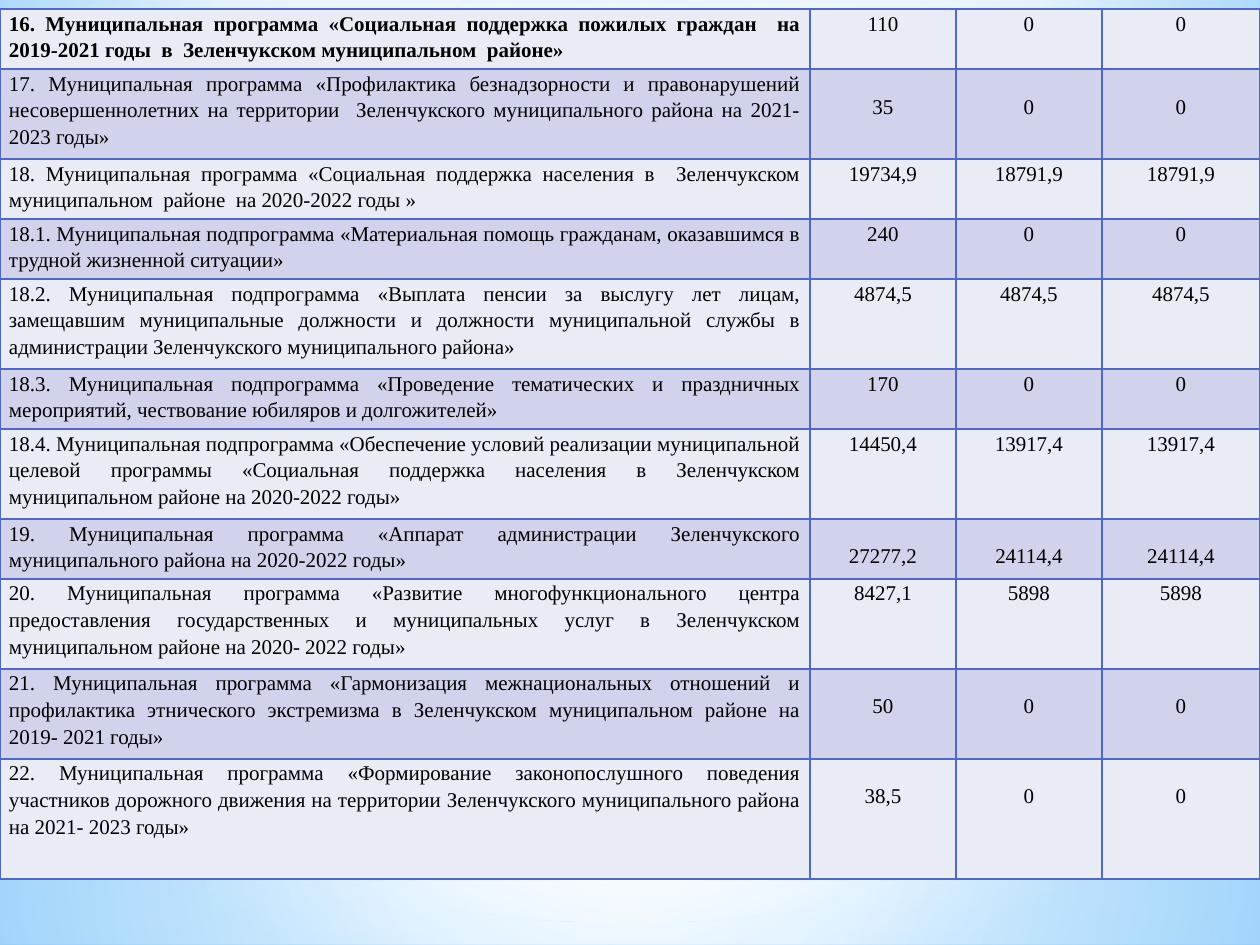
from lxml.etree import SubElement
from pptx import Presentation
from pptx.dml.color import RGBColor
from pptx.enum.shapes import MSO_SHAPE
from pptx.enum.text import PP_ALIGN
from pptx.oxml.ns import qn
from pptx.util import Emu, Pt

EMU_PER_PX = 914400 // 126
WIDTH, HEIGHT = 1260, 945
FONT = "Times New Roman"
BORDER = "4E67C8"
ROW_FILLS = ("E9EBF5", "D0D3EB")
COLUMN_WIDTHS = (810, 146, 146, 158)
LINE_HEIGHT = 30
LOWERED_MARGIN = 23

# Programme, three yearly amounts, row height in lines, amounts lowered by a line
PROGRAMMES = [
    ("16. Муниципальная программа «Социальная поддержка пожилых граждан  на 2019-2021 годы  в  "
     "Зеленчукском муниципальном  районе»", ("110", "0", "0"), 2, False),
    ("17. Муниципальная программа «Профилактика безнадзорности и правонарушений "
     "несовершеннолетних на территории  Зеленчукского муниципального района на 2021-2023 годы»",
     ("35", "0", "0"), 3, True),
    ("18. Муниципальная программа «Социальная поддержка населения в  Зеленчукском "
     "муниципальном  районе  на 2020-2022 годы »", ("19734,9", "18791,9", "18791,9"), 2, False),
    ("18.1. Муниципальная подпрограмма «Материальная помощь гражданам, оказавшимся в трудной "
     "жизненной ситуации»", ("240", "0", "0"), 2, False),
    ("18.2. Муниципальная подпрограмма «Выплата пенсии за выслугу лет лицам, замещавшим "
     "муниципальные должности и должности муниципальной службы в администрации Зеленчукского "
     "муниципального района»", ("4874,5", "4874,5", "4874,5"), 3, False),
    ("18.3. Муниципальная подпрограмма «Проведение тематических и праздничных мероприятий, "
     "чествование юбиляров и долгожителей»", ("170", "0", "0"), 2, False),
    ("18.4. Муниципальная подпрограмма «Обеспечение условий реализации муниципальной целевой "
     "программы «Социальная поддержка населения в Зеленчукском муниципальном районе на "
     "2020-2022 годы»", ("14450,4", "13917,4", "13917,4"), 3, False),
    ("19. Муниципальная программа «Аппарат администрации Зеленчукского муниципального района "
     "на 2020-2022 годы»", ("27277,2", "24114,4", "24114,4"), 2, True),
    ("20. Муниципальная программа «Развитие многофункционального центра предоставления "
     "государственных и муниципальных услуг в Зеленчукском муниципальном районе на 2020- 2022 "
     "годы»", ("8427,1", "5898", "5898"), 3, False),
    ("21. Муниципальная программа «Гармонизация межнациональных отношений и профилактика "
     "этнического экстремизма в Зеленчукском муниципальном районе на 2019- 2021 годы»",
     ("50", "0", "0"), 3, True),
    ("22. Муниципальная программа «Формирование законопослушного поведения участников "
     "дорожного движения на территории Зеленчукского муниципального района на 2021- 2023 годы»",
     ("38,5", "0", "0"), 4, True),
]

# Preset shape, box, gradient stops (position, colour, opacity), circular or vertical
GLOWS = [
    (MSO_SHAPE.RECTANGLE, (0, 703, WIDTH, 242),
     [(0, "FFFFFF", 91), (37, "FFFFFF", 76), (100, "B4DCFA", 79)], True),
    (MSO_SHAPE.RECTANGLE, (0, 0, WIDTH, 703),
     [(0, "FFFFFF", 89), (48, "FFFFFF", 62), (100, "B4DCFA", 79)], True),
    (MSO_SHAPE.RECTANGLE, (0, 519, WIDTH, 315),
     [(0, "FFFFFF", 0), (29, "FFFFFF", 30), (45, "B4DCFA", 40), (55, "FFFFFF", 26),
      (65, "B4DCFA", 60), (100, "FFFFFF", 0)], False),
    (MSO_SHAPE.OVAL, (0, 220, WIDTH, 703),
     [(0, "FFFFFF", 100), (56, "FFFFFF", 0)], True),
]


def px(length):
    return Emu(length * EMU_PER_PX)


def color(value):
    return RGBColor.from_string(value)


def set_gradient(element, stops, focus=None):
    """Rewrite the gradient inside element: circular around focus, or else vertical."""
    gradient = element.find(".//" + qn("a:gradFill"))
    for child in list(gradient):
        gradient.remove(child)
    stop_list = SubElement(gradient, qn("a:gsLst"))
    for position, value, opacity in stops:
        stop = SubElement(stop_list, qn("a:gs"), pos=str(position * 1000))
        stop_color = SubElement(stop, qn("a:srgbClr"), val=value)
        if opacity < 100:
            SubElement(stop_color, qn("a:alpha"), val=str(opacity * 1000))
    if focus:
        path = SubElement(gradient, qn("a:path"), path="circle")
        sides = {side: str(share * 1000) for side, share in zip("ltrb", focus)}
        SubElement(path, qn("a:fillToRect"), **sides)
    else:
        SubElement(gradient, qn("a:lin"), ang="5400000", scaled="0")


def paint_background(slide):
    slide.background.fill.gradient()
    stops = [(0, "9ED5FF", 100), (60, "FFFFFF", 100), (100, "5BB9FF", 100)]
    set_gradient(slide.element, stops, (20, 10, 20, 60))


def add_glow(slide, preset, box, stops, circular):
    shape = slide.shapes.add_shape(preset, *map(px, box))
    shape.shadow.inherit = False
    shape.line.fill.background()
    shape.fill.gradient()
    set_gradient(shape.element, stops, (50, 50, 50, 50) if circular else None)


def add_borders(cell):
    properties = cell._tc.get_or_add_tcPr()
    for index, side in enumerate(("a:lnL", "a:lnR", "a:lnT", "a:lnB")):
        line = properties.makeelement(qn(side), {"w": str(Pt(1))})
        properties.insert(index, line)
        fill = SubElement(line, qn("a:solidFill"))
        SubElement(fill, qn("a:srgbClr"), val=BORDER)


def fill_cell(cell, text, fill, alignment, bold=False, top=0):
    cell.fill.solid()
    cell.fill.fore_color.rgb = color(fill)
    cell.margin_left = cell.margin_right = px(9)
    cell.margin_top, cell.margin_bottom = px(top), 0
    add_borders(cell)
    para = cell.text_frame.paragraphs[0]
    para.alignment = alignment
    para.line_spacing = 1.15
    span = para.add_run()
    span.text = text
    span.font.name = FONT
    span.font.size = Pt(12)
    span.font.bold = bold
    span.font.color.rgb = color("000000")


def add_programme_table(slide):
    height = LINE_HEIGHT * sum(lines for _, _, lines, _ in PROGRAMMES)
    frame = slide.shapes.add_table(len(PROGRAMMES), len(COLUMN_WIDTHS),
                                   px(0), px(9), px(WIDTH), px(height))
    table = frame.table
    table.first_row = table.horz_banding = False
    for column, width in zip(table.columns, COLUMN_WIDTHS):
        column.width = px(width)
    for index, (name, amounts, lines, lowered) in enumerate(PROGRAMMES):
        table.rows[index].height = px(lines * LINE_HEIGHT)
        fill = ROW_FILLS[index % 2]
        fill_cell(table.cell(index, 0), name, fill, PP_ALIGN.JUSTIFY, bold=index == 0)
        for column, amount in enumerate(amounts, start=1):
            fill_cell(table.cell(index, column), amount, fill, PP_ALIGN.CENTER,
                      top=LOWERED_MARGIN if lowered else 0)


def main():
    deck = Presentation()
    deck.slide_width, deck.slide_height = px(WIDTH), px(HEIGHT)
    slide = deck.slides.add_slide(deck.slide_layouts[6])
    paint_background(slide)
    for glow in GLOWS:
        add_glow(slide, *glow)
    add_programme_table(slide)
    deck.save("out.pptx")


if __name__ == "__main__":
    main()
